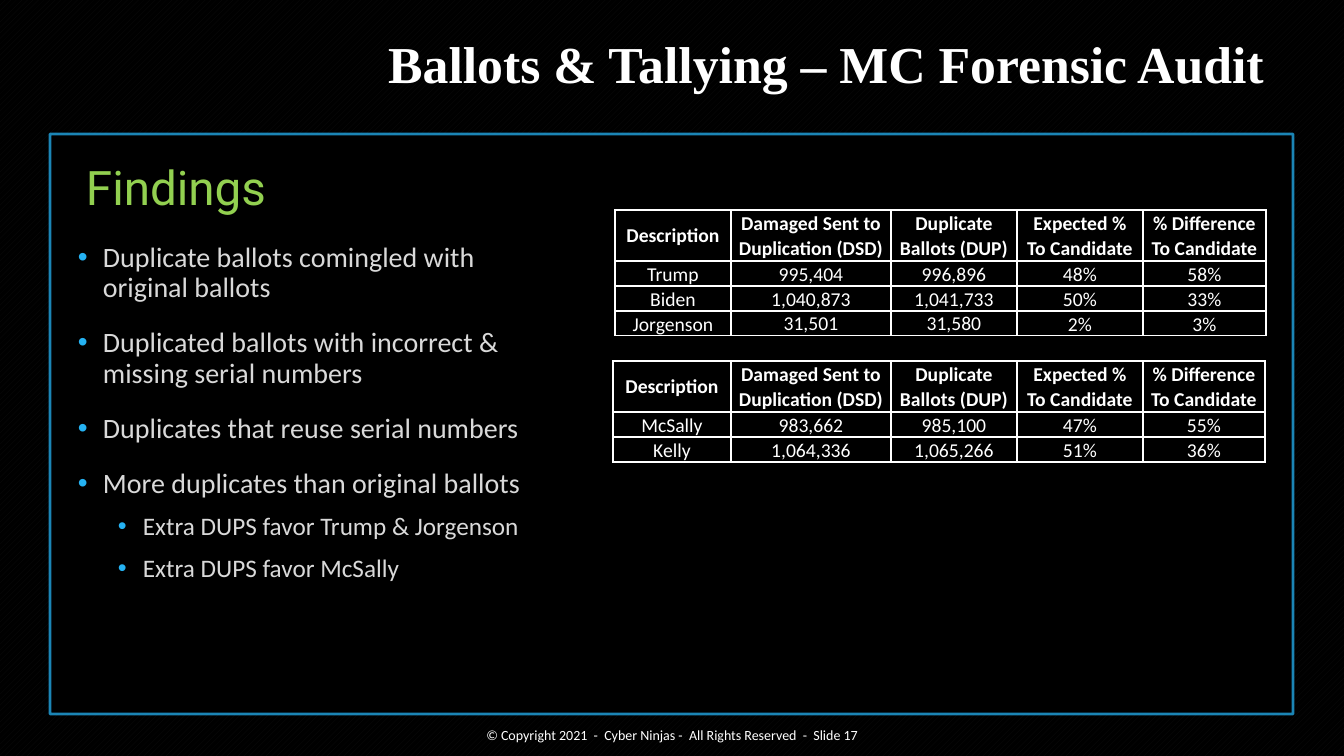
from lxml.etree import SubElement
from pptx import Presentation
from pptx.dml.color import RGBColor
from pptx.enum.dml import MSO_PATTERN
from pptx.enum.shapes import MSO_SHAPE
from pptx.enum.text import MSO_ANCHOR, PP_ALIGN
from pptx.oxml.ns import qn
from pptx.util import Pt

# Content
TITLE = "Ballots & Tallying – MC Forensic Audit"
HEAD = "Findings"
FOOT = "© Copyright 2021  -  Cyber Ninjas -  All Rights Reserved  -  Slide 17"
POINTS = [
    (0, "Duplicate ballots comingled with original ballots"),
    (0, "Duplicated ballots with incorrect & missing serial numbers"),
    (0, "Duplicates that reuse serial numbers"),
    (0, "More duplicates than original ballots"),
    (1, "Extra DUPS favor Trump & Jorgenson"),
    (1, "Extra DUPS favor McSally"),
]
COLS = ("Description", "Damaged Sent to Duplication (DSD)", "Duplicate Ballots (DUP)",
        "Expected % To Candidate", "% Difference To Candidate")
TABLES = [
    # left, top, column widths, rows
    (615, 210, (116, 160, 126, 126, 123), [
        ("Trump", "995,404", "996,896", "48%", "58%"),
        ("Biden", "1,040,873", "1,041,733", "50%", "33%"),
        ("Jorgenson", "31,501", "31,580", "2%", "3%"),
    ]),
    (613, 361, (118, 160, 126, 126, 122), [
        ("McSally", "983,662", "985,100", "47%", "55%"),
        ("Kelly", "1,064,336", "1,065,266", "51%", "36%"),
    ]),
]
# Text size, space before, left indent by bullet level
LEVELS = [(20, 18, 25), (18, 10, 65)]
HANG = 25
HEAD_H, ROW_H = 51, 25

BLACK = RGBColor(0x00, 0x00, 0x00)
DARK = RGBColor(0x0D, 0x0D, 0x0D)
WHITE = RGBColor(0xFF, 0xFF, 0xFF)
GREY = RGBColor(0xD9, 0xD9, 0xD9)
GREEN = RGBColor(0x92, 0xD0, 0x50)
BLUE = RGBColor(0x25, 0xB2, 0xF2)


def px(n):
    return round(n * 914400 / 100.8)


def add_run(para, text, size, color, face="Calibri", bold=False):
    run = para.add_run()
    run.text = text
    font = run.font
    font.size, font.name, font.bold = Pt(size), face, bold
    font.color.rgb = color


def add_box(slide, left, top, width, height, anchor=MSO_ANCHOR.TOP, right=10):
    frame = slide.shapes.add_textbox(px(left), px(top), px(width), px(height)).text_frame
    frame.word_wrap = True
    frame.vertical_anchor = anchor
    frame.margin_left, frame.margin_right = px(10), px(right)
    frame.margin_top = frame.margin_bottom = px(5)
    para = frame.paragraphs[0]
    para.line_spacing = 0.9
    return frame, para


def add_bullet(para, indent):
    props = para._p.get_or_add_pPr()
    props.set("marL", str(px(indent)))
    props.set("indent", str(px(-HANG)))
    tint = SubElement(props, qn("a:buClr"))
    SubElement(tint, qn("a:srgbClr"), val=str(BLUE))
    SubElement(props, qn("a:buFont"), typeface="Arial")
    SubElement(props, qn("a:buChar"), char="•")


def add_border(cell):
    props = cell._tc.get_or_add_tcPr()
    for side in ("lnL", "lnR", "lnT", "lnB"):
        line = SubElement(props, qn(f"a:{side}"), w=str(Pt(1)))
        fill = SubElement(line, qn("a:solidFill"))
        SubElement(fill, qn("a:srgbClr"), val=str(WHITE))


def add_grid(slide, left, top, widths, rows):
    rows = [COLS, *rows]
    high = HEAD_H + ROW_H * (len(rows) - 1)
    grid = slide.shapes.add_table(len(rows), len(COLS), px(left), px(top),
                                  px(sum(widths)), px(high)).table
    grid.first_row = grid.horz_banding = False
    for col, width in zip(grid.columns, widths):
        col.width = px(width)
    for r, row in enumerate(rows):
        grid.rows[r].height = px(ROW_H if r else HEAD_H)
        for c, text in enumerate(row):
            cell = grid.cell(r, c)
            add_border(cell)
            cell.fill.background()
            cell.margin_left = cell.margin_right = px(7)
            cell.margin_top = cell.margin_bottom = 0
            count = r > 0 and c in (1, 2)
            cell.vertical_anchor = MSO_ANCHOR.BOTTOM if count else MSO_ANCHOR.MIDDLE
            para = cell.text_frame.paragraphs[0]
            para.alignment = PP_ALIGN.CENTER
            para.line_spacing = 1.06
            add_run(para, text, 14, WHITE, bold=r == 0)


def main():
    deck = Presentation()
    deck.slide_width, deck.slide_height = px(1344), px(756)
    slide = deck.slides.add_slide(deck.slide_layouts[6])

    # Background
    back = slide.background.fill
    back.patterned()
    back.pattern = MSO_PATTERN.WIDE_UPWARD_DIAGONAL
    back.fore_color.rgb, back.back_color.rgb = DARK, BLACK

    # Panel with a partly clear outline
    panel = slide.shapes.add_shape(MSO_SHAPE.RECTANGLE, px(50), px(134), px(1243), px(580))
    panel.shadow.inherit = False
    panel.fill.solid()
    panel.fill.fore_color.rgb = BLACK
    panel.line.color.rgb = BLUE
    panel.line.width = Pt(2)
    tint = panel.line._ln.find(".//" + qn("a:srgbClr"))
    SubElement(tint, qn("a:alpha"), val="75000")

    # Title and heading
    _, para = add_box(slide, 378, 33, 915, 67, MSO_ANCHOR.MIDDLE, right=29)
    para.alignment = PP_ALIGN.RIGHT
    add_run(para, TITLE, 37, WHITE, "Times New Roman", True)
    _, para = add_box(slide, 76, 159, 1192, 76)
    add_run(para, HEAD, 34, GREEN, "Roboto")

    # Bullet list
    frame, para = add_box(slide, 68, 238, 496, 446)
    for i, (level, text) in enumerate(POINTS):
        size, gap, indent = LEVELS[level]
        if i:
            para = frame.add_paragraph()
            para.line_spacing = 0.9
            para.space_before = Pt(gap)
        para.level = level
        add_bullet(para, indent)
        add_run(para, text, size, GREY)

    # Tables
    for spot in TABLES:
        add_grid(slide, *spot)

    # Footer
    _, para = add_box(slide, 0, 723, 1344, 25)
    para.alignment = PP_ALIGN.CENTER
    add_run(para, FOOT, 10, WHITE)

    deck.save("out.pptx")


if __name__ == "__main__":
    main()
